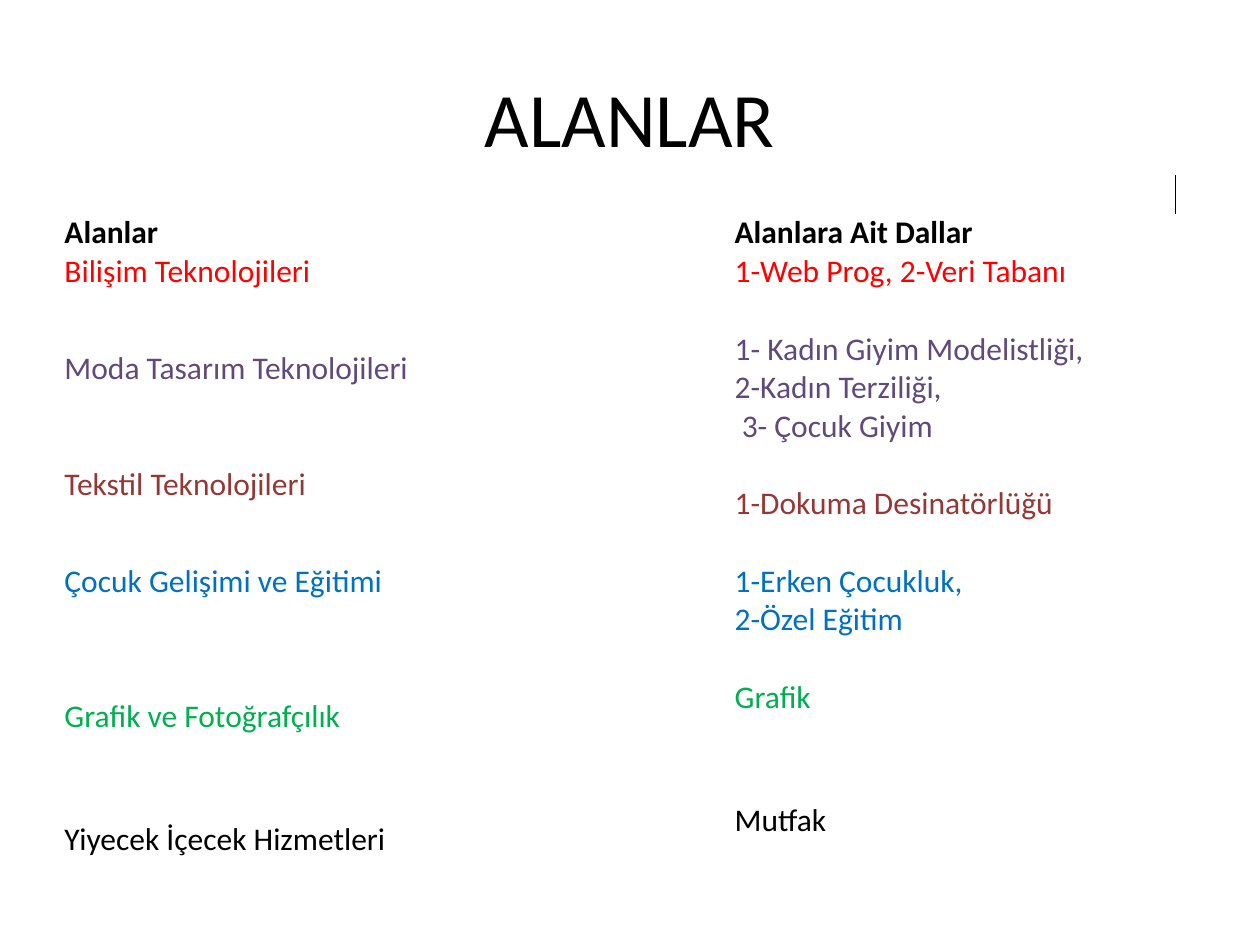
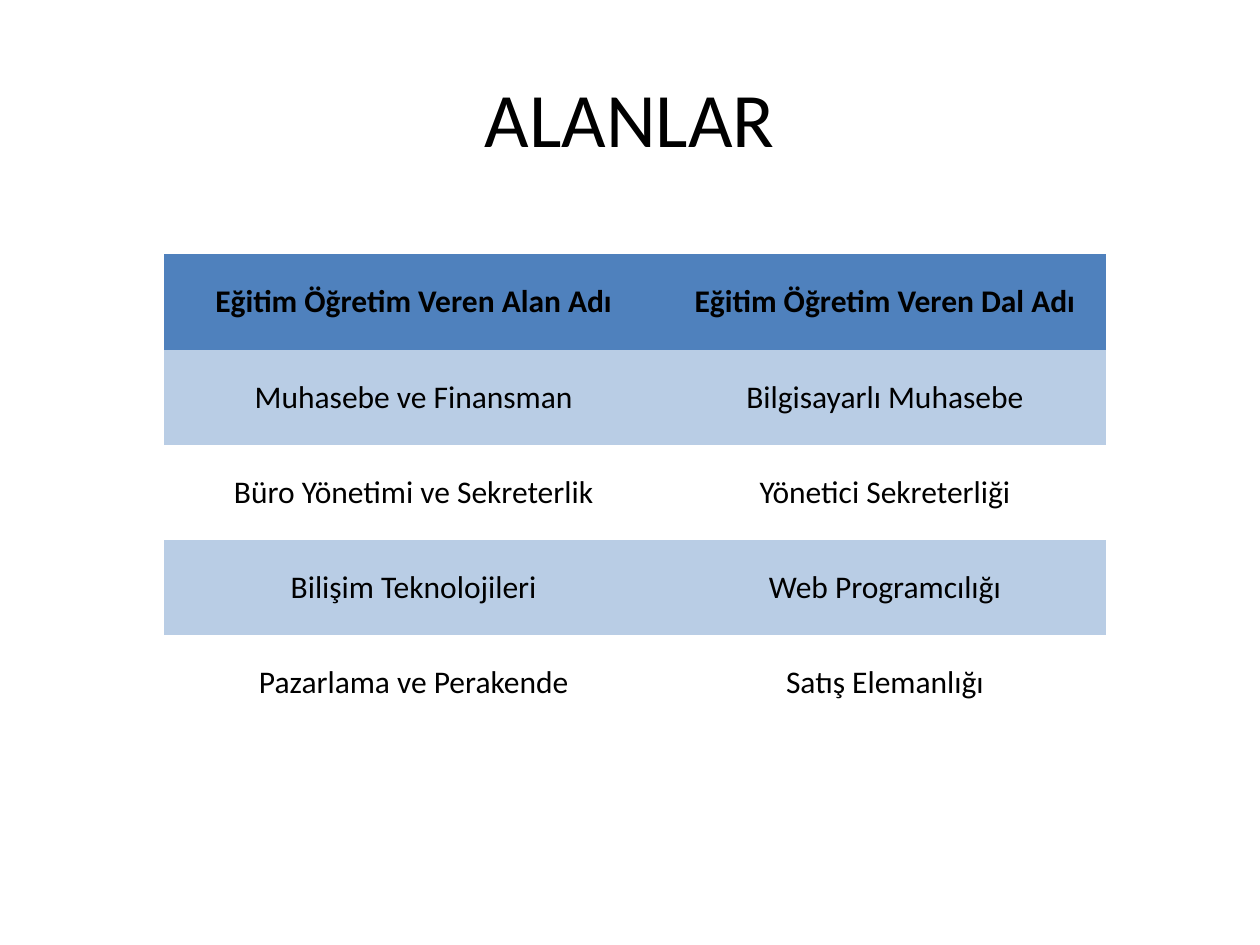
import pptx
import pptx.dml.color
import pptx.enum.text
import pptx.oxml
import pptx.util
from pptx.oxml.ns import nsdecls, qn

Cm = pptx.util.Cm
Pt = pptx.util.Pt
PP_ALIGN = pptx.enum.text.PP_ALIGN
MIDDLE = pptx.enum.text.MSO_ANCHOR.MIDDLE

FONT = "Calibri"
BLACK = "000000"
HEADER_BLUE = "4F81BD"
BAND_BLUE = "B9CDE5"
PLAIN_STYLE = "{2D5ABB26-0587-4C30-8999-92F81FD0307C}"
LINE = 0.78  # height in cm of one 18 pt text line

# field, branches, colour, free lines above and below the branches, row height
FIELDS = [
    ("Alanlar", ["Alanlara Ait Dallar"], BLACK, 0, 0, LINE),
    ("Bilişim Teknolojileri", ["1-Web Prog, 2-Veri Tabanı"], "FF0000", 0, 0, LINE),
    ("Moda Tasarım Teknolojileri",
     ["1- Kadın Giyim Modelistliği,", "2-Kadın Terziliği,", " 3- Çocuk Giyim"],
     "604A7B", 1, 0, 4 * LINE),
    ("Tekstil Teknolojileri", ["1-Dokuma Desinatörlüğü"], "953735", 1, 0, 2 * LINE),
    ("Çocuk Gelişimi ve Eğitimi", ["1-Erken Çocukluk,", "2-Özel Eğitim"],
     "0070C0", 1, 0, 3 * LINE),
    ("Grafik ve Fotoğrafçılık", ["Grafik"], "00B050", 1, 2, 4 * LINE),
    ("Yiyecek İçecek Hizmetleri", ["Mutfak"], BLACK, 0, 1, 1.83),
]
TOP_ROW, BOTTOM_ROW = LINE, 1.27

PROGRAMMES = [
    ("Eğitim Öğretim Veren Alan Adı", "Eğitim Öğretim Veren Dal Adı"),
    ("Muhasebe ve Finansman", "Bilgisayarlı Muhasebe"),
    ("Büro Yönetimi ve Sekreterlik", "Yönetici Sekreterliği"),
    ("Bilişim Teknolojileri", "Web Programcılığı"),
    ("Pazarlama ve Perakende", "Satış Elemanlığı"),
]


def rgb(code):
    return pptx.dml.color.RGBColor.from_string(code)


def apply(target, formats):
    for attribute, value in formats.items():
        setattr(target, attribute, value)


def write(frame, lines, color=BLACK, size=18, bold=False, align=PP_ALIGN.LEFT):
    """Put each line in its own paragraph of the text frame."""
    for index, line in enumerate(lines):
        paragraph = frame.add_paragraph() if index else frame.paragraphs[0]
        paragraph.alignment = align
        run = paragraph.add_run()
        run.text = line
        apply(run.font, {"name": FONT, "size": Pt(size), "bold": bold})
        run.font.color.rgb = rgb(color)


def add_titled_slide(deck, title):
    slide = deck.slides.add_slide(deck.slide_layouts[6])
    frame = slide.shapes.add_textbox(Cm(1.27), Cm(0.76), Cm(22.86), Cm(3.18)).text_frame
    apply(frame, {"word_wrap": True, "vertical_anchor": MIDDLE})
    write(frame, [title], size=44, align=PP_ALIGN.CENTER)
    return slide


def add_plain_table(slide, left, top, widths, heights):
    """Add a table without style, cell margins or fills."""
    table = slide.shapes.add_table(
        len(heights), len(widths), Cm(left), Cm(top),
        Cm(sum(widths)), Cm(sum(heights))).table
    apply(table, {"first_row": False, "horz_banding": False})
    table._tbl.tblPr.find(qn("a:tableStyleId")).text = PLAIN_STYLE
    for column, width in zip(table.columns, widths):
        column.width = Cm(width)
    for row, height in zip(table.rows, heights):
        row.height = Cm(height)
    for cell in table.iter_cells():
        apply(cell, {"margin_left": 0, "margin_right": 0, "margin_top": 0,
                     "margin_bottom": 0, "vertical_anchor": MIDDLE})
        cell.fill.background()
    return table


def add_right_border(cell, color):
    border = pptx.oxml.parse_xml(
        f'<a:lnR {nsdecls("a")} w="12700"><a:solidFill>'
        f'<a:srgbClr val="{color}"/></a:solidFill></a:lnR>')
    cell._tc.get_or_add_tcPr().insert(0, border)


def add_fields_table(slide):
    heights = [TOP_ROW, *(field[-1] for field in FIELDS), BOTTOM_ROW]
    table = add_plain_table(slide, 1.3, 3.53, [13.51, 8.89], heights)
    for cell in table.rows[0].cells:
        add_right_border(cell, BLACK)
    table.cell(0, 0).merge(table.cell(0, 1))
    for row, (field, branches, color, above, below, _) in enumerate(FIELDS, start=1):
        field_cell, branch_cell = table.rows[row].cells
        heading = row == 1
        write(field_cell.text_frame, [field], color, bold=heading)
        write(branch_cell.text_frame, branches, color, bold=heading)
        apply(branch_cell, {"margin_top": Cm(above * LINE),
                            "margin_bottom": Cm(below * LINE)})


def add_programmes_table(slide):
    table = add_plain_table(slide, 3.3, 5.13, [10.08, 8.92], [1.92] * len(PROGRAMMES))
    for row, names in enumerate(PROGRAMMES):
        for cell, name in zip(table.rows[row].cells, names):
            write(cell.text_frame, [name], bold=row == 0, align=PP_ALIGN.CENTER)
            if row == 0 or row % 2:
                cell.fill.solid()
                cell.fill.fore_color.rgb = rgb(BAND_BLUE if row else HEADER_BLUE)


def main():
    deck = pptx.Presentation()
    apply(deck, {"slide_width": Cm(25.4), "slide_height": Cm(19.05)})
    for add_content in (add_fields_table, add_programmes_table):
        add_content(add_titled_slide(deck, "ALANLAR"))
    deck.save("out.pptx")


if __name__ == "__main__":
    main()
